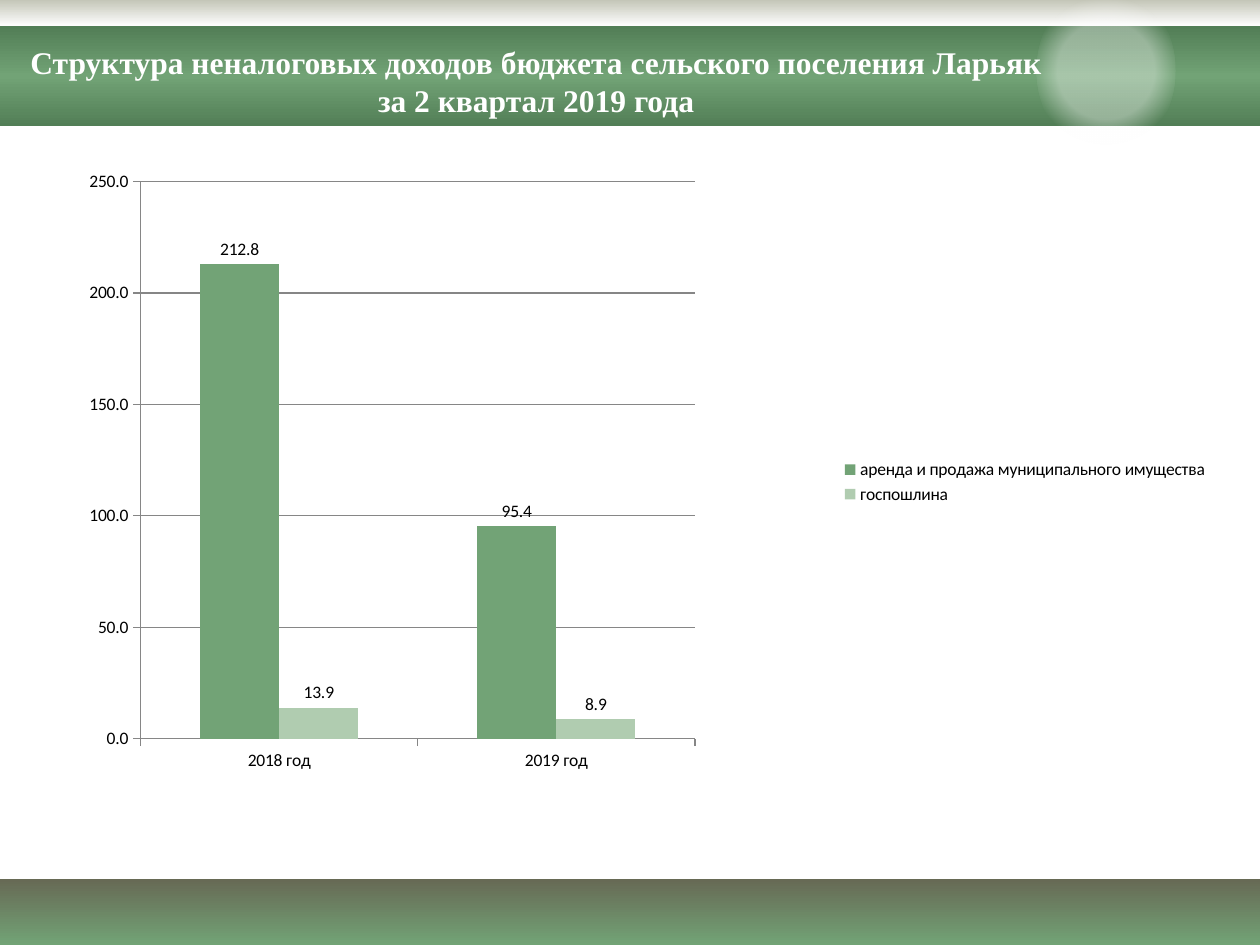
from dataclasses import dataclass

from pptx import Presentation
from pptx.chart.data import CategoryChartData
from pptx.dml.color import RGBColor
from pptx.enum.chart import XL_CHART_TYPE as ChartType
from pptx.enum.chart import XL_LABEL_POSITION as LabelPosition
from pptx.enum.chart import XL_LEGEND_POSITION as LegendPosition
from pptx.enum.chart import XL_TICK_MARK as TickMark
from pptx.enum.shapes import MSO_SHAPE as ShapeKind
from pptx.enum.text import MSO_ANCHOR as Anchor
from pptx.enum.text import MSO_AUTO_SIZE as AutoSize
from pptx.enum.text import PP_ALIGN as Align
from pptx.oxml import parse_xml
from pptx.oxml.ns import nsdecls, qn
from pptx.util import Inches, Pt

WIDTH, HEIGHT = 10, 7.5


@dataclass(frozen=True)
class Theme:
    green: str = "72A376"
    dark_green: str = "527E56"
    pale_green: str = "B0CCB0"
    olive: str = "676A55"
    stone: str = "C4C6B8"
    white: str = "FFFFFF"
    black: str = "000000"
    axis: str = "868686"
    title_font: str = "Times New Roman"
    chart_font: str = "Calibri"
    title_size: float = 18
    chart_size: float = 10


THEME = Theme()


@dataclass(frozen=True)
class Box:
    left: float
    top: float
    width: float
    height: float

    def lengths(self) -> tuple:
        return tuple(Inches(v) for v in (self.left, self.top, self.width, self.height))


@dataclass(frozen=True)
class Stop:
    position: int
    color: str
    opacity: int = 100


@dataclass(frozen=True)
class Decoration:
    box: Box
    stops: tuple
    kind: ShapeKind = ShapeKind.RECTANGLE
    direction: str = '<a:lin ang="5400000" scaled="0"/>'


RADIAL = (
    '<a:path path="circle"><a:fillToRect l="50000" t="50000" r="50000" b="50000"/></a:path>'
)
DECORATIONS = (
    Decoration(Box(0, 6.98, WIDTH, 0.52), (Stop(0, THEME.olive), Stop(100, THEME.green))),
    Decoration(Box(0, 0, WIDTH, 0.21), (Stop(0, THEME.stone), Stop(100, THEME.white))),
    Decoration(
        Box(0, 0.21, WIDTH, 0.79),
        (Stop(0, THEME.dark_green), Stop(50, THEME.green), Stop(100, THEME.dark_green)),
    ),
    Decoration(
        Box(8.23, -0.11, 1.1, 1.34),
        (Stop(44, THEME.white, 38), Stop(67, THEME.white, 0)),
        ShapeKind.OVAL,
        RADIAL,
    ),
)


def draw_decoration(slide, decoration: Decoration) -> None:
    shape = slide.shapes.add_shape(decoration.kind, *decoration.box.lengths())
    shape.shadow.inherit = False
    shape.fill.background()
    stops = "".join(
        f'<a:gs pos="{stop.position * 1000}"><a:srgbClr val="{stop.color}">'
        f'<a:alpha val="{stop.opacity * 1000}"/></a:srgbClr></a:gs>'
        for stop in decoration.stops
    )
    gradient = parse_xml(
        f'<a:gradFill {nsdecls("a")} rotWithShape="1"><a:gsLst>{stops}</a:gsLst>'
        f"{decoration.direction}</a:gradFill>"
    )
    properties = shape.element.spPr
    properties.replace(properties.find(qn("a:noFill")), gradient)
    shape.line.fill.background()


def format_font(font, *, name: str, size: float, color: str, bold: bool = False) -> None:
    font.name = name
    font.size = Pt(size)
    font.bold = bold
    font.color.rgb = RGBColor.from_string(color)


def write_text(shape, text: str, *, align: Align, **font_format) -> None:
    frame = shape.text_frame
    frame.word_wrap = True
    frame.auto_size = AutoSize.SHAPE_TO_FIT_TEXT
    frame.vertical_anchor = Anchor.TOP
    paragraph = frame.paragraphs[0]
    paragraph.alignment = align
    run = paragraph.add_run()
    run.text = text
    format_font(run.font, **font_format)


def draw_title(slide, text: str, box: Box) -> None:
    title = slide.shapes.title
    title.left, title.top, title.width, title.height = box.lengths()
    title.element.getparent().append(title.element)
    write_text(
        title,
        text,
        align=Align.CENTER,
        name=THEME.title_font,
        size=THEME.title_size,
        color=THEME.white,
        bold=True,
    )


def set_plot_area(chart, area: Box) -> None:
    shares = dict(x=area.left, y=area.top, w=area.width, h=area.height)
    modes = "".join(f'<c:{key}Mode val="edge"/>' for key in "xy")
    values = "".join(f'<c:{key} val="{value}"/>' for key, value in shares.items())
    layout = parse_xml(
        f'<c:layout {nsdecls("c")}><c:manualLayout><c:layoutTarget val="inner"/>'
        f"{modes}{values}</c:manualLayout></c:layout>"
    )
    plot_area = chart.element.find(".//" + qn("c:plotArea"))
    for existing in plot_area.findall(qn("c:layout")):
        plot_area.remove(existing)
    plot_area.insert(0, layout)


def draw_chart(slide, box: Box, area: Box, categories: tuple, series: dict) -> None:
    data = CategoryChartData(number_format="#,##0.0")
    data.categories = categories
    for name, (values, _) in series.items():
        data.add_series(name, values)
    chart = slide.shapes.add_chart(ChartType.COLUMN_CLUSTERED, *box.lengths(), data).chart
    format_font(chart.font, name=THEME.chart_font, size=THEME.chart_size, color=THEME.black)
    chart.has_title = False
    chart.has_legend = True
    chart.legend.position = LegendPosition.RIGHT
    chart.legend.include_in_layout = False
    set_plot_area(chart, area)

    value_axis = chart.value_axis
    value_axis.has_major_gridlines = True
    value_axis.tick_labels.number_format = "#,##0.0"
    value_axis.tick_labels.number_format_is_linked = False
    for axis in (chart.category_axis, value_axis):
        axis.major_tick_mark = TickMark.OUTSIDE
    for line in (
        chart.category_axis.format.line,
        value_axis.format.line,
        value_axis.major_gridlines.format.line,
    ):
        line.color.rgb = RGBColor.from_string(THEME.axis)
        line.width = Pt(0.75)

    plot = chart.plots[0]
    plot.gap_width = 150
    plot.overlap = 0
    plot.vary_by_categories = False
    for item, (_, color) in zip(plot.series, series.values()):
        item.format.fill.solid()
        item.format.fill.fore_color.rgb = RGBColor.from_string(color)
        labels = item.data_labels
        labels.show_value = True
        labels.position = LabelPosition.OUTSIDE_END


def main() -> None:
    presentation = Presentation()
    presentation.slide_width, presentation.slide_height = Inches(WIDTH), Inches(HEIGHT)
    slide = presentation.slides.add_slide(presentation.slide_layouts.get_by_name("Title Only"))
    for decoration in DECORATIONS:
        draw_decoration(slide, decoration)
    draw_title(
        slide,
        "Структура неналоговых доходов бюджета сельского поселения Ларьяк за 2 квартал 2019 года",
        Box(0.12, 0.29, 8.27, 1.01),
    )
    draw_chart(
        slide,
        Box(0.31, 1.17, 9.38, 5.31),
        Box(0.086, 0.051, 0.469, 0.833),
        ("2018 год", "2019 год"),
        {
            "аренда и продажа муниципального имущества": ((212.8, 95.4), THEME.green),
            "госпошлина": ((13.9, 8.9), THEME.pale_green),
        },
    )
    presentation.save("out.pptx")


if __name__ == "__main__":
    main()
